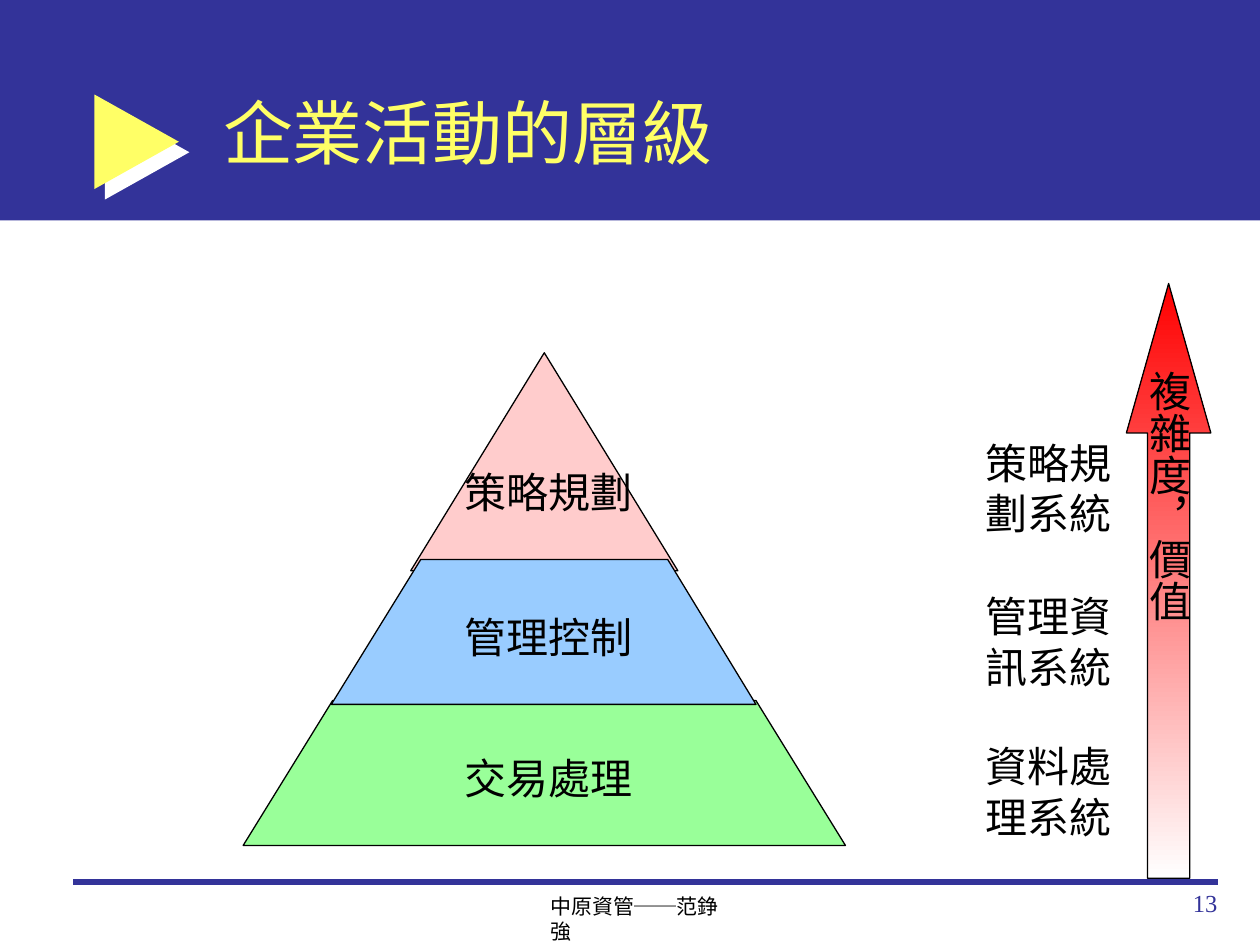
from lxml import etree
from pptx import Presentation
from pptx.dml.color import RGBColor
from pptx.enum.shapes import MSO_CONNECTOR, MSO_SHAPE
from pptx.enum.text import MSO_ANCHOR, PP_ALIGN
from pptx.oxml.ns import qn
from pptx.util import Inches, Pt

LEFT, CENTER, RIGHT = PP_ALIGN.LEFT, PP_ALIGN.CENTER, PP_ALIGN.RIGHT
TOP, MIDDLE = MSO_ANCHOR.TOP, MSO_ANCHOR.MIDDLE
NAVY = RGBColor(0x33, 0x33, 0x99)
YELLOW = RGBColor(0xFF, 0xFF, 0x66)
WHITE = RGBColor(0xFF, 0xFF, 0xFF)
BLACK = RGBColor(0, 0, 0)
RED = RGBColor(0xFF, 0, 0)
PINK = RGBColor(0xFF, 0xCC, 0xCC)
BLUE = RGBColor(0x99, 0xCC, 0xFF)
GREEN = RGBColor(0x99, 0xFF, 0x99)


def write(shape, text, size=24, color=BLACK, font="Times New Roman",
          align=LEFT, anchor=TOP, inset=(0.1, 0.05), wrap=True):
    frame = shape.text_frame
    frame.word_wrap = wrap
    frame.vertical_anchor = anchor
    frame.margin_left = frame.margin_right = Inches(inset[0])
    frame.margin_top = frame.margin_bottom = Inches(inset[1])
    para = frame.paragraphs[0]
    para.alignment = align
    run = para.add_run()
    run.text = text
    run.font.size = Pt(size)
    run.font.name = font
    run.font.color.rgb = color


def paint(shape, fill, line=None):
    shape.shadow.inherit = False
    shape.fill.solid()
    shape.fill.fore_color.rgb = fill
    if line is None:
        shape.line.fill.background()
    else:
        shape.line.color.rgb = line
        shape.line.width = Pt(0.75)


deck = Presentation()
deck.slide_width, deck.slide_height = Inches(10), Inches(7.5)
slide = deck.slides.add_slide(deck.slide_layouts[5])
shapes = slide.shapes

# Header band, marker and rule
band = shapes.add_shape(MSO_SHAPE.RECTANGLE, 0, 0, Inches(10), Inches(1.75))
paint(band, NAVY)

mark = shapes.add_shape(MSO_SHAPE.RIGHT_ARROW, Inches(0.75), Inches(0.75),
                        Inches(0.67), Inches(0.75))
mark.adjustments[0], mark.adjustments[1] = 0.38, 1
paint(mark, YELLOW)
effects = mark.element.spPr.find(qn("a:effectLst"))
shade = etree.SubElement(effects, qn("a:outerShdw"), dist=str(Pt(8.5)),
                         dir="2700000", algn="ctr", rotWithShape="0")
etree.SubElement(shade, qn("a:srgbClr"), val=str(WHITE))

rule = shapes.add_connector(MSO_CONNECTOR.STRAIGHT, Inches(0.58), Inches(7),
                            Inches(9.67), Inches(7))
rule.line.color.rgb = NAVY
rule.line.width = Pt(3)
etree.SubElement(rule.element.spPr, qn("a:effectLst"))

# Footer and page number
footer = shapes.add_textbox(Inches(4.27), Inches(7.04), Inches(1.62), Inches(0.3))
write(footer, "中原資管──范錚強", size=12)
page = shapes.add_textbox(Inches(7.68), Inches(7), Inches(2.08), Inches(0.5))
write(page, "13", size=14, color=NAVY, align=RIGHT)

# Vertical arrow
arrow = shapes.add_shape(MSO_SHAPE.UP_ARROW, Inches(8.94), Inches(2.25),
                         Inches(0.67), Inches(4.72))
arrow.adjustments[0], arrow.adjustments[1] = 0.5, 1.77
paint(arrow, RED, BLACK)
arrow.fill.gradient()
arrow.fill.gradient_angle = 270
for stop, color in zip(arrow.fill.gradient_stops, (RED, WHITE)):
    stop.color.rgb = color
write(arrow, "複雜度，價值", align=CENTER, anchor=MIDDLE, wrap=False)
arrow.text_frame._txBody.bodyPr.set("vert", "eaVert")

# Title, brought in front of the band
title = shapes.title
title.element.getparent().append(title.element)
title.left, title.top = Inches(1.67), Inches(0.42)
title.width, title.height = Inches(7.58), Inches(1.25)
write(title, "企業活動的層級", size=40, color=YELLOW, font="Arial", anchor=MIDDLE)

# Pyramid: outline, fill, label and its box, system and its box
LEVELS = [
    ([(3.26, 4.53), (4.32, 2.8), (5.38, 4.53)], PINK,
     "策略規劃", (3.54, 3.67, 1.63, 0.65),
     "策略規劃系統", (7.75, 3.44, 1.18, 0.61)),
    ([(1.93, 6.71), (2.64, 5.56), (6, 5.56), (6.71, 6.71)], GREEN,
     "交易處理", (2.71, 5.94, 3.29, 0.71),
     "資料處理系統", (7.75, 5.85, 1.23, 0.67)),
    ([(2.63, 5.59), (3.34, 4.44), (5.3, 4.44), (6, 5.59)], BLUE,
     "管理控制", (3.29, 4.82, 2.13, 0.69),
     "管理資訊系統", (7.75, 4.66, 1.23, 0.65)),
]
INSET = (0.07, 0.03)
for points, color, label, spot, system, place in LEVELS:
    if len(points) == 3:
        (left, base), (_, peak), (right, _) = points
        layer = shapes.add_shape(MSO_SHAPE.ISOSCELES_TRIANGLE, Inches(left), Inches(peak),
                                 Inches(right - left), Inches(base - peak))
    else:
        first, *rest = [(Inches(x), Inches(y)) for x, y in points]
        pen = shapes.build_freeform(*first)
        pen.add_line_segments(rest, close=True)
        layer = pen.convert_to_shape()
    paint(layer, color, BLACK)
    box = shapes.add_textbox(*map(Inches, spot))
    write(box, label, align=CENTER, inset=INSET)
    card = shapes.add_shape(MSO_SHAPE.RECTANGLE, *map(Inches, place))
    paint(card, WHITE)
    write(card, system, inset=INSET)

deck.save("out.pptx")
